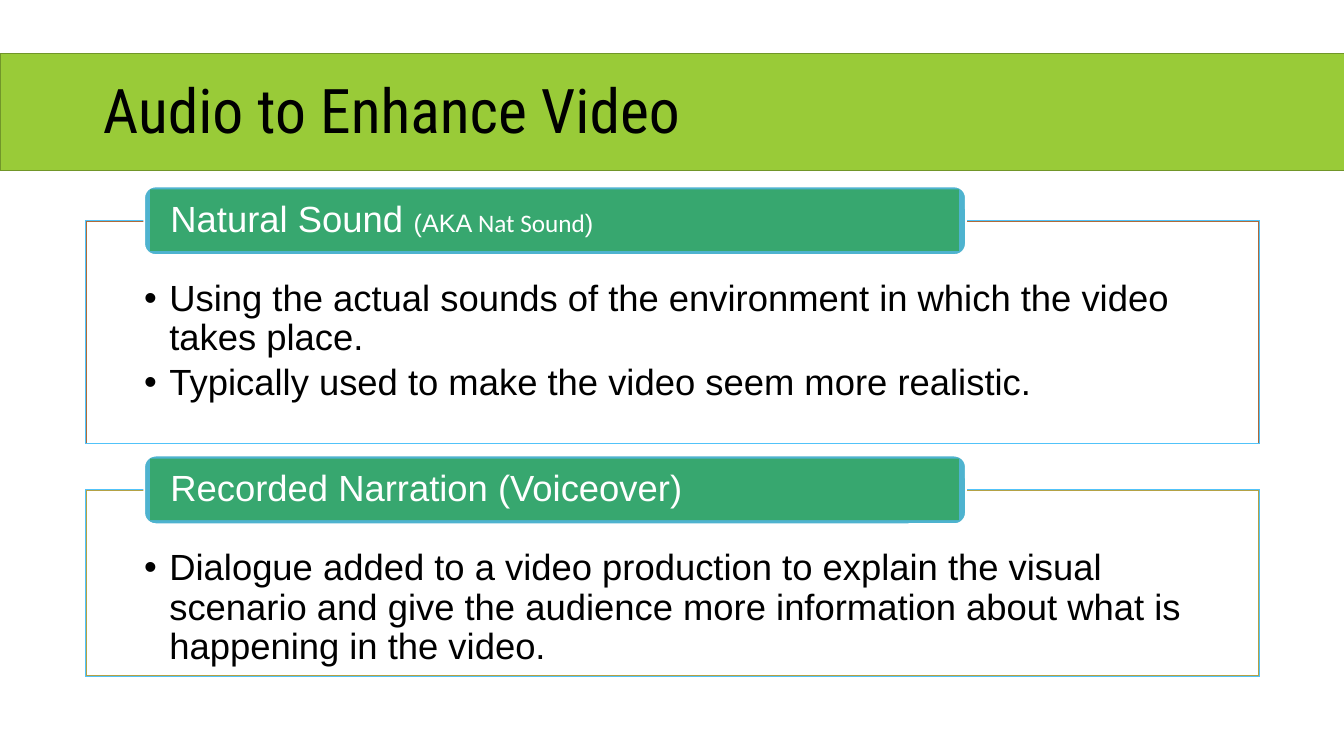
from pptx import Presentation
from pptx.dml.color import RGBColor
from pptx.enum.shapes import MSO_SHAPE as SHAPE
from pptx.enum.text import MSO_ANCHOR as ANCHOR, PP_ALIGN as ALIGN
from pptx.oxml.ns import qn
from pptx.util import Inches, Pt
from lxml import etree

# Content: heading runs are (text, size, font)
TITLE = "Audio to Enhance Video"
SECTIONS = [
    dict(top=2.19, height=2.21, edge="B06B39",
         heading=[("Natural Sound ", 26, "Arial"), ("(AKA ", 18, "Arial"),
                  ("Nat Sound", 18, "Calibri"), (")", 18, "Arial")],
         bullets=["Using the actual sounds of the environment in which the video takes place.",
                  "Typically used to make the video seem more realistic."]),
    dict(top=4.86, height=1.85, edge="B4A245",
         heading=[("Recorded Narration (Voiceover)", 26, "Arial")],
         bullets=["Dialogue added to a video production to explain the visual scenario and "
                  "give the audience more information about what is happening in the video."]),
]
PANEL_LEFT, PANEL_WIDTH = 0.85, 11.64
TAB_RISE = 0.34  # how far a heading tab stands above its panel


def rgb(value):
    return RGBColor.from_string(value)


def add_box(s, kind, box, fill=None, line=None, width=1.0):
    sp = s.shapes.add_shape(kind, *[Inches(v) for v in box])
    sp.shadow.inherit = False
    if fill:
        sp.fill.solid()
        sp.fill.fore_color.rgb = rgb(fill)
    else:
        sp.fill.background()
    if line:
        sp.line.color.rgb = rgb(line)
        sp.line.width = Pt(width)
    else:
        sp.line.fill.background()
    return sp


def set_frame(sp, anchor, insets):
    tf = sp.text_frame
    tf.word_wrap = True
    tf.vertical_anchor = anchor
    tf.margin_left, tf.margin_top, tf.margin_right, tf.margin_bottom = map(Inches, insets)
    return tf


def add_run(p, text, size, font, color):
    p.alignment = ALIGN.LEFT
    p.line_spacing = 0.9
    r = p.add_run()
    r.text = text
    r.font.size, r.font.name = Pt(size), font
    r.font.color.rgb = rgb(color)


def add_bullet(p):
    pPr = p._p.get_or_add_pPr()
    pPr.set("marL", str(Inches(0.25)))
    pPr.set("indent", str(-Inches(0.25)))
    color = etree.SubElement(pPr, qn("a:buClr"))
    etree.SubElement(color, qn("a:srgbClr"), val="000000")
    etree.SubElement(pPr, qn("a:buFont"), typeface="Arial")
    etree.SubElement(pPr, qn("a:buChar"), char="•")


def add_section(s, top, height, edge, heading, bullets):
    # Panel: translucent back, then the outlined text
    box = (PANEL_LEFT, top, PANEL_WIDTH, height)
    back = add_box(s, SHAPE.RECTANGLE, box, "FFFFFF", edge, 1.25)
    color = back.fill._xPr.find(qn("a:solidFill"))[0]
    etree.SubElement(color, qn("a:alpha"), val="90000")
    panel = add_box(s, SHAPE.RECTANGLE, box, None, "51C3F9", 0.75)
    tf = set_frame(panel, ANCHOR.TOP, (0.58, 0.59, 0.58, 0.2))
    for i, text in enumerate(bullets):
        p = tf.add_paragraph() if i else tf.paragraphs[0]
        add_run(p, text, 26, "Arial", "000000")
        if i:
            p.space_before = Pt(3.9)
        add_bullet(p)

    # Heading tab: rounded rim, then the label
    tab_top = top - TAB_RISE
    rim = add_box(s, SHAPE.ROUNDED_RECTANGLE, (PANEL_LEFT + 0.58, tab_top, 8.15, 0.68),
                  "4EB3CF", "FFFFFF", 1.25)
    rim.adjustments[0] = 0.167
    label = add_box(s, SHAPE.RECTANGLE, (PANEL_LEFT + 0.64, tab_top + 0.03, 8.02, 0.61), "37A76F")
    tf = set_frame(label, ANCHOR.MIDDLE, (0.2, 0, 0.2, 0))
    for text, size, font in heading:
        add_run(tf.paragraphs[0], text, size, font, "FFFFFF")


def main():
    prs = Presentation()
    prs.slide_width, prs.slide_height = Inches(13.33), Inches(7.5)
    s = prs.slides.add_slide(prs.slide_layouts[5])

    # Title on its green band
    title = s.shapes.title
    title.left, title.top, title.width, title.height = map(Inches, (0.92, 0.4, 11.5, 1.45))
    tf = set_frame(title, ANCHOR.MIDDLE, (0.1, 0.05, 0.1, 0.05))
    add_run(tf.paragraphs[0], TITLE, 44, "Roboto Condensed", "000000")
    band = add_box(s, SHAPE.RECTANGLE, (0, 0.53, 13.39, 1.16), "99CB38", "719629", 1)
    title.element.addprevious(band.element)

    for section in SECTIONS:
        add_section(s, **section)
    prs.save("out.pptx")


if __name__ == "__main__":
    main()
